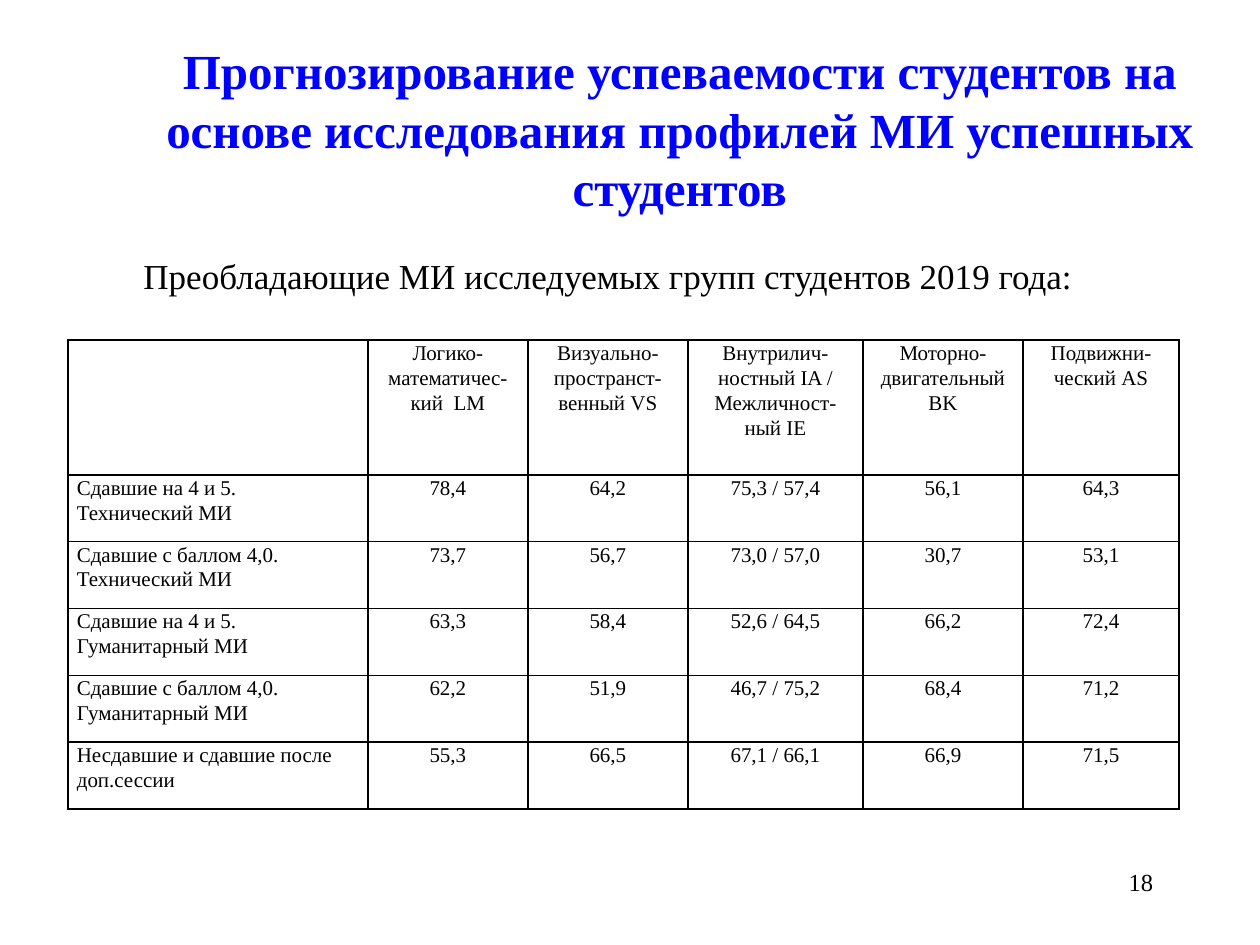
from lxml.etree import SubElement
from pptx import Presentation
from pptx.dml.color import RGBColor
from pptx.enum.text import MSO_AUTO_SIZE, PP_ALIGN
from pptx.oxml.ns import qn
from pptx.util import Inches, Pt

BLACK = RGBColor(0, 0, 0)
WHITE = RGBColor(255, 255, 255)
BLUE = RGBColor(0, 0, 255)
FONT = "Times New Roman"

COLUMN_WIDTHS = [2.38, 1.27, 1.27, 1.39, 1.27, 1.24]
ROW_HEIGHTS = [1.07] + [0.53] * 5
ROWS = [
    ["", "Логико-математичес-кий  LM", "Визуально-пространст-венный VS",
     "Внутрилич-ностный IA /\nМежличност-ный IE",
     "Моторно-двигательный BK", "Подвижни- ческий AS"],
    ["Сдавшие на 4 и 5.\nТехнический МИ", "78,4", "64,2", "75,3 / 57,4", "56,1", "64,3"],
    ["Сдавшие с баллом 4,0.\nТехнический МИ", "73,7", "56,7", "73,0 / 57,0", "30,7", "53,1"],
    ["Сдавшие на 4 и 5.\nГуманитарный МИ", "63,3", "58,4", "52,6 / 64,5", "66,2", "72,4"],
    ["Сдавшие с баллом 4,0.\nГуманитарный МИ", "62,2", "51,9", "46,7 / 75,2", "68,4", "71,2"],
    ["Несдавшие и сдавшие после доп.сессии", "55,3", "66,5", "67,1 / 66,1", "66,9", "71,5"],
]
TEXTS = [
    ("Прогнозирование успеваемости студентов на основе исследования "
     "профилей МИ успешных студентов",
     (1.16, 0.27, 8.47, 1.51), PP_ALIGN.CENTER, 28, BLUE, True, MSO_AUTO_SIZE.SHAPE_TO_FIT_TEXT),
    ("Преобладающие МИ исследуемых групп студентов 2019 года:",
     (1.04, 1.97, 8.6, 0.44), PP_ALIGN.LEFT, 20, BLACK, False, MSO_AUTO_SIZE.SHAPE_TO_FIT_TEXT),
    ("18", (7.17, 6.83, 2.08, 0.5), PP_ALIGN.RIGHT, 14, BLACK, False, MSO_AUTO_SIZE.NONE),
]


def style_paragraph(paragraph, alignment, size, color, bold=False):
    paragraph.alignment = alignment
    font_format = {"name": FONT, "size": Pt(size), "bold": bold}
    for attribute, value in font_format.items():
        setattr(paragraph.font, attribute, value)
    paragraph.font.color.rgb = color


def add_borders(cell):
    properties = cell._tc.get_or_add_tcPr()
    for position, side in enumerate(("lnL", "lnR", "lnT", "lnB")):
        line = SubElement(properties, qn(f"a:{side}"), w=str(Pt(1)))
        fill = SubElement(line, qn("a:solidFill"))
        SubElement(fill, qn("a:srgbClr"), val=str(BLACK))
        properties.insert(position, line)


presentation = Presentation()
presentation.slide_width = Inches(10)
presentation.slide_height = Inches(7.5)
slide = presentation.slides.add_slide(presentation.slide_layouts[6])

for text, box, alignment, size, color, bold, auto_size in TEXTS:
    text_frame = slide.shapes.add_textbox(*map(Inches, box)).text_frame
    text_frame.word_wrap = True
    text_frame.auto_size = auto_size
    text_frame.text = text
    style_paragraph(text_frame.paragraphs[0], alignment, size, color, bold)

table = slide.shapes.add_table(
    len(ROWS), len(COLUMN_WIDTHS), Inches(0.54), Inches(2.7), Inches(8.81), Inches(3.73)
).table
for column, width in zip(table.columns, COLUMN_WIDTHS):
    column.width = Inches(width)
for row, height in zip(table.rows, ROW_HEIGHTS):
    row.height = Inches(height)

cell_margins = {
    "margin_left": Inches(0.07), "margin_right": Inches(0.07),
    "margin_top": 0, "margin_bottom": 0,
}
for row_index, values in enumerate(ROWS):
    for column_index, value in enumerate(values):
        cell = table.cell(row_index, column_index)
        for attribute, margin in cell_margins.items():
            setattr(cell, attribute, margin)
        cell.fill.solid()
        cell.fill.fore_color.rgb = WHITE
        add_borders(cell)
        cell.text = value
        alignment = PP_ALIGN.CENTER if column_index else PP_ALIGN.LEFT
        for paragraph in cell.text_frame.paragraphs:
            paragraph.line_spacing = 1.07
            style_paragraph(paragraph, alignment, 12, BLACK)

presentation.save("out.pptx")
